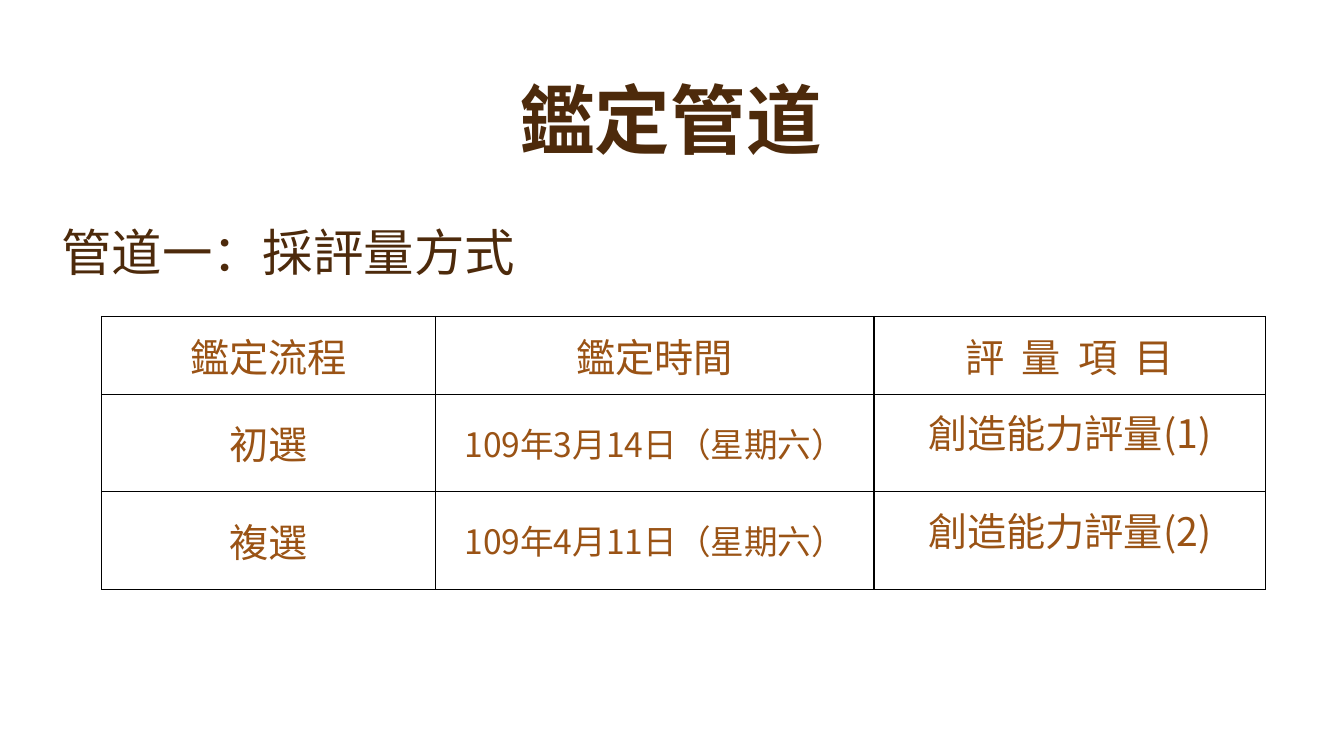
from lxml import etree
from pptx import Presentation
from pptx.dml.color import RGBColor
from pptx.enum.text import MSO_ANCHOR as ANCHOR, PP_ALIGN as ALIGN
from pptx.oxml.ns import qn
from pptx.util import Inches, Pt

FONT = "Noto Sans CJK SC"
DARK_BROWN = RGBColor(0x4D, 0x2A, 0x0B)
BROWN = RGBColor(0x9A, 0x53, 0x15)
BORDER = RGBColor(0, 0, 0)

# text, (left, top, width, height), alignment, font format
HEADINGS = [
    ("管道一：採評量方式", (0.51, 2.07, 6.46, 0.78), ALIGN.LEFT,
     {"size": Pt(36), "bold": False}),
    ("鑑定管道", (1.15, 0.35, 11, 1.33), ALIGN.CENTER,
     {"size": Pt(54), "bold": True}),
]
ROWS = [
    ("鑑定流程", "鑑定時間", "評 量 項 目"),
    ("初選", "109年3月14日（星期六）", "創造能力評量(1)"),
    ("複選", "109年4月11日（星期六）", "創造能力評量(2)"),
]
TABLE_LEFT, TABLE_TOP = 1.01, 3.14
COL_WIDTHS = (3.31, 4.35, 3.88)
ROW_HEIGHT = 0.77
DATE_COL, ITEM_COL = 1, 2


def write(p, text, align, color, fmt):
    p.alignment = align
    r = p.add_run()
    r.text = text
    for name, value in {"name": FONT, **fmt}.items():
        setattr(r.font, name, value)
    r.font.color.rgb = color
    etree.SubElement(r.font._element, qn("a:ea"), typeface=FONT)
    return r


def add_borders(cell):
    tcPr = cell._tc.get_or_add_tcPr()
    for side in ("a:lnL", "a:lnR", "a:lnT", "a:lnB"):
        ln = etree.SubElement(tcPr, qn(side), w=str(Pt(1)))
        fill = etree.SubElement(ln, qn("a:solidFill"))
        etree.SubElement(fill, qn("a:srgbClr"), val=str(BORDER))


def add_heading(s, text, box, align, fmt):
    tf = s.shapes.add_textbox(*map(Inches, box)).text_frame
    tf.word_wrap = True
    tf.vertical_anchor = ANCHOR.BOTTOM
    p = tf.paragraphs[0]
    p.line_spacing = 0.9
    write(p, text, align, DARK_BROWN, fmt)


def add_schedule(s):
    frame = s.shapes.add_table(
        len(ROWS), len(COL_WIDTHS), Inches(TABLE_LEFT), Inches(TABLE_TOP),
        Inches(sum(COL_WIDTHS)), Inches(ROW_HEIGHT * len(ROWS)))
    table = frame.table
    table.first_row = table.horz_banding = False
    for col, width in zip(table.columns, COL_WIDTHS):
        col.width = Inches(width)
    for i, texts in enumerate(ROWS):
        table.rows[i].height = Inches(ROW_HEIGHT)
        for j, text in enumerate(texts):
            cell = table.cell(i, j)
            add_borders(cell)
            cell.fill.background()
            cell.vertical_anchor = ANCHOR.MIDDLE
            cell.margin_top = cell.margin_bottom = 0
            p = cell.text_frame.paragraphs[0]
            size = 24 if i and j == DATE_COL else 28
            r = write(p, text, ALIGN.CENTER, BROWN, {"size": Pt(size)})
            if j == ITEM_COL and i == 0:
                r.font._element.set("spc", "310")
            elif j == ITEM_COL:
                p.line_spacing = Pt(12)
                cell.margin_top = Inches(0.17)
                pPr = p._p.get_or_add_pPr()
                pPr.set("marL", str(Inches(0.15)))
                pPr.set("indent", str(Inches(-0.25)))


def main():
    prs = Presentation()
    prs.slide_width, prs.slide_height = Inches(13.33), Inches(7.5)
    s = prs.slides.add_slide(prs.slide_layouts[6])
    add_schedule(s)
    for heading in HEADINGS:
        add_heading(s, *heading)
    prs.save("out.pptx")


if __name__ == "__main__":
    main()
